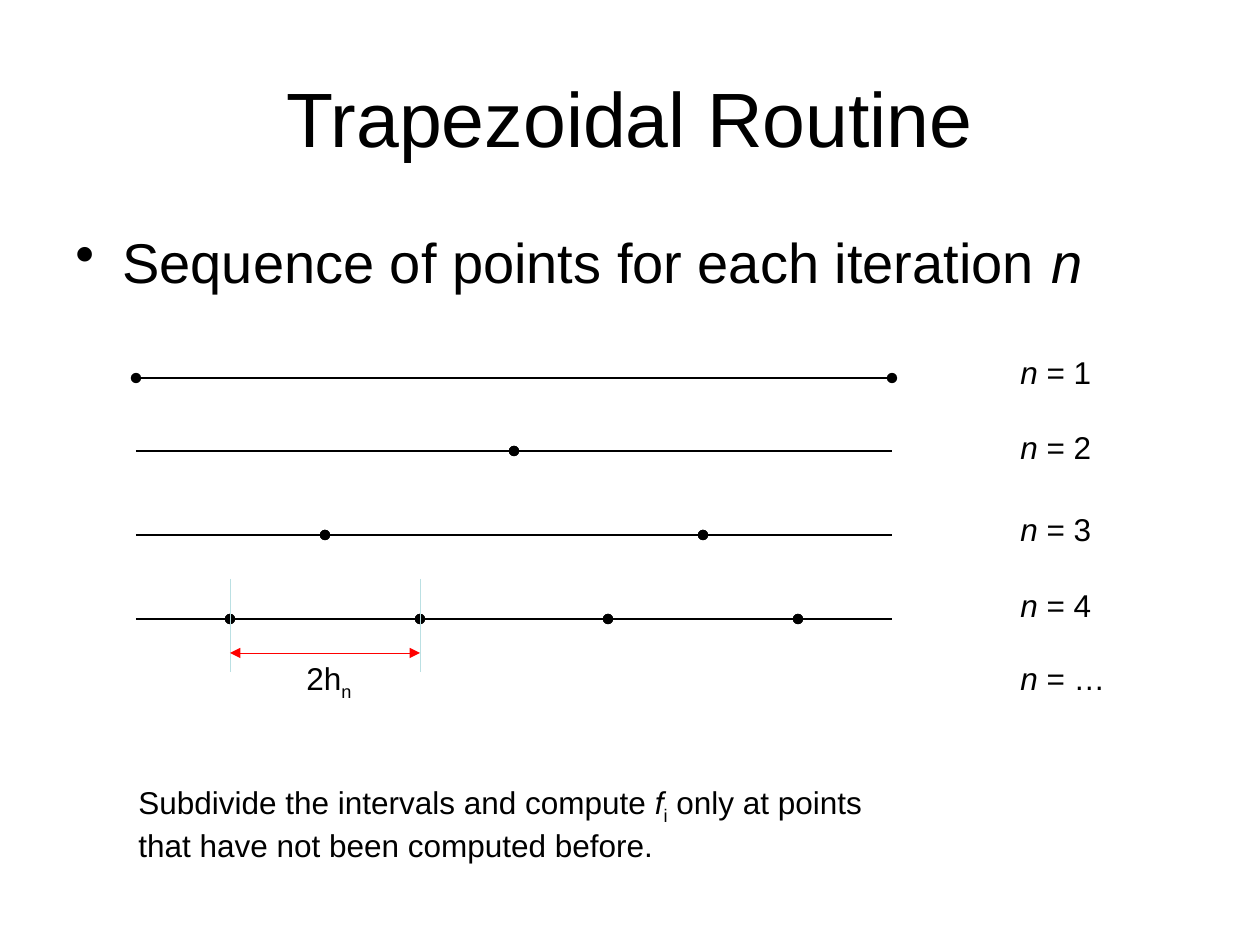
import dataclasses
import typing

import pptx
import pptx.dml.color
import pptx.enum.shapes
import pptx.enum.text
import pptx.oxml
import pptx.oxml.ns
import pptx.util

PX = 914400 / 126  # EMU per pixel

BLACK = pptx.dml.color.RGBColor(0x00, 0x00, 0x00)
RED = pptx.dml.color.RGBColor(0xFF, 0x00, 0x00)
PALE_BLUE = pptx.dml.color.RGBColor(0xBB, 0xE0, 0xE3)

AXIS_LEFT, AXIS_WIDTH = 136, 756
LABEL_LEFT = 1008


class Run(typing.NamedTuple):
    text: str
    italic: bool = False
    subscript: bool = False


@dataclasses.dataclass
class Iteration:
    label: str
    label_top: int
    axis_y: int = 0
    points: tuple[int, ...] = ()  # in eighths of the axis


ITERATIONS = [
    Iteration("1", 347, 378, (0, 8)),
    Iteration("2", 422, 451, (4,)),
    Iteration("3", 504, 535, (2, 6)),
    Iteration("4", 580, 619, (1, 3, 5, 7)),
    Iteration("…", 653),
]


def emu(px: float) -> pptx.util.Emu:
    return pptx.util.Emu(round(px * PX))


def axis_x(eighths: int) -> int:
    return round(AXIS_LEFT + AXIS_WIDTH * eighths / 8)


def add_text(slide, runs: list[Run], left: int, top: int, width: int, height: int, *,
             size: int = 18, align=pptx.enum.text.PP_ALIGN.LEFT,
             anchor=pptx.enum.text.MSO_ANCHOR.TOP, bullet_indent: int = 0) -> None:
    frame = slide.shapes.add_textbox(*map(emu, (left, top, width, height))).text_frame
    frame.word_wrap = True
    frame.vertical_anchor = anchor
    paragraph = frame.paragraphs[0]
    paragraph.alignment = align
    for part in runs:
        run = paragraph.add_run()
        run.text = part.text
        run.font.name = "Arial"
        run.font.size = pptx.util.Pt(size)
        run.font.italic = part.italic
        run.font.color.rgb = BLACK
        if part.subscript:
            run.font._element.set("baseline", "-25000")
    if bullet_indent:
        properties = paragraph._p.get_or_add_pPr()
        properties.set("marL", str(emu(bullet_indent)))
        properties.set("indent", str(-emu(bullet_indent)))
        properties.append(pptx.oxml.parse_xml(
            f'<a:buChar {pptx.oxml.ns.nsdecls("a")} char="•"/>'))


def add_line(slide, x1: int, y1: int, x2: int, y2: int, *,
             color=BLACK, weight: float = 0.75, head: str = "", tail: str = "") -> None:
    connector = slide.shapes.add_connector(
        pptx.enum.shapes.MSO_CONNECTOR.STRAIGHT, *map(emu, (x1, y1, x2, y2)))
    connector.line.color.rgb = color
    connector.line.width = pptx.util.Pt(weight)
    namespace = pptx.oxml.ns.nsdecls("a")
    for end, kind in (("headEnd", head), ("tailEnd", tail)):
        if kind:
            connector.line._get_or_add_ln().append(
                pptx.oxml.parse_xml(f'<a:{end} {namespace} type="{kind}"/>'))
    connector._element.spPr.append(pptx.oxml.parse_xml(f"<a:effectLst {namespace}/>"))


def add_iteration(slide, iteration: Iteration) -> None:
    add_text(slide, [Run("n", italic=True), Run(f" = {iteration.label}")],
             LABEL_LEFT, iteration.label_top, 147, 50)
    if not iteration.points:
        return
    # Segments join at the sample points, each of which carries a dot
    stops = sorted({0, 8, *iteration.points})
    for start, end in zip(stops, stops[1:]):
        add_line(slide, axis_x(start), iteration.axis_y, axis_x(end), iteration.axis_y,
                 head="oval" if start in iteration.points else "",
                 tail="oval" if end in iteration.points else "")


def main() -> None:
    presentation = pptx.Presentation()
    presentation.slide_width, presentation.slide_height = emu(1260), emu(945)
    slide = presentation.slides.add_slide(presentation.slide_layouts[6])

    # Heading and bullet
    add_text(slide, [Run("Trapezoidal Routine")], 63, 38, 1134, 157, size=44,
             align=pptx.enum.text.PP_ALIGN.CENTER, anchor=pptx.enum.text.MSO_ANCHOR.MIDDLE)
    add_text(slide, [Run("Sequence of points for each iteration "), Run("n", italic=True)],
             63, 221, 1134, 624, size=32, bullet_indent=47)

    # Sample points of each iteration
    for iteration in ITERATIONS:
        add_iteration(slide, iteration)

    # Spacing between new points
    spacing_left, spacing_right = axis_x(1), axis_x(3)
    for guide_x in (spacing_left, spacing_right):
        add_line(slide, guide_x, 579, guide_x, 672, color=PALE_BLUE, weight=0.5)
    add_line(slide, spacing_left, 653, spacing_right, 653, color=RED, weight=0.5,
             head="triangle", tail="triangle")
    add_text(slide, [Run("2h"), Run("n", subscript=True)], 294, 653, 74, 50)

    # Closing remark
    add_text(slide, [Run("Subdivide the intervals and compute "), Run("f", italic=True),
                     Run("i", subscript=True),
                     Run(" only at points that have not been computed before.")],
             126, 777, 756, 88)

    presentation.save("out.pptx")


if __name__ == "__main__":
    main()
